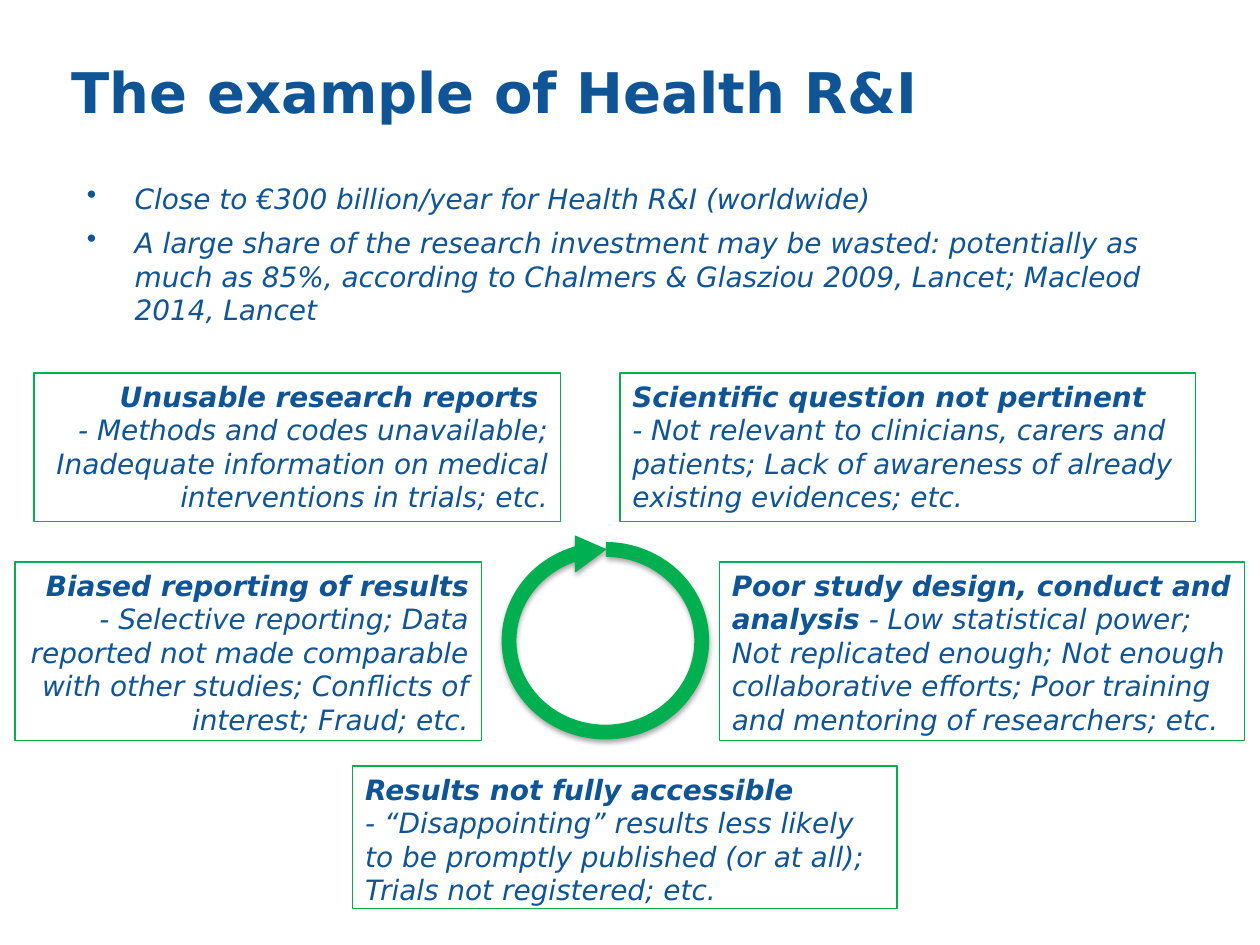
import lxml.etree
import pptx
import pptx.dml.color
import pptx.enum.shapes
import pptx.enum.text
import pptx.oxml.ns
import pptx.util

Inches = pptx.util.Inches
Pt = pptx.util.Pt
qn = pptx.oxml.ns.qn
Align = pptx.enum.text.PP_ALIGN
Anchor = pptx.enum.text.MSO_ANCHOR
Shape = pptx.enum.shapes.MSO_SHAPE

FONT = "DejaVu Sans"
BLUE = "0F5494"
GREEN = "00B050"


def color(value):
    return pptx.dml.color.RGBColor.from_string(value)


class HealthSlide:
    def __init__(self, slide):
        self.slide = slide

    def add_run(self, paragraph, text, size=16, bold=False, italic=True):
        run = paragraph.add_run()
        run.text = text
        run.font.name = FONT
        run.font.size = Pt(size)
        run.font.bold = bold
        run.font.italic = italic
        run.font.color.rgb = color(BLUE)

    def text_frame(self, place):
        frame = self.slide.shapes.add_textbox(*map(Inches, place)).text_frame
        frame.word_wrap = True
        return frame

    def outlined_shape(self, kind, place):
        shape = self.slide.shapes.add_shape(kind, *map(Inches, place))
        shape.shadow.inherit = False
        shape.line.color.rgb = color(GREEN)
        shape.line.width = Pt(0.75)
        return shape

    def title(self, text, place):
        frame = self.text_frame(place)
        frame.vertical_anchor = Anchor.MIDDLE
        self.add_run(frame.paragraphs[0], text, size=32, bold=True, italic=False)

    def bullets(self, items, place):
        frame = self.text_frame(place)
        for index, text in enumerate(items):
            paragraph = frame.add_paragraph() if index else frame.paragraphs[0]
            properties = paragraph._p.get_or_add_pPr()
            properties.set("marL", str(Inches(0.38)))
            properties.set("indent", str(-Inches(0.38)))
            bullet_color = lxml.etree.SubElement(properties, qn("a:buClr"))
            lxml.etree.SubElement(bullet_color, qn("a:srgbClr"), val=BLUE)
            lxml.etree.SubElement(properties, qn("a:buChar"), char="•")
            paragraph.space_after = Pt(6)
            self.add_run(paragraph, text)

    def cycle_arrow(self, place):
        arrow = self.outlined_shape(Shape.CIRCULAR_ARROW, place)
        arrow.rotation = 270
        for index, value in enumerate((0.062, 11.423, 204.577, 0.442, 0.081)):
            arrow.adjustments[index] = value
        arrow.fill.solid()
        arrow.fill.fore_color.rgb = color(GREEN)
        effects = arrow._element.spPr.find(qn("a:effectLst"))
        shadow = lxml.etree.SubElement(
            effects, qn("a:outerShdw"), blurRad=str(Pt(3.1)),
            dist=str(Pt(1.8)), dir="5400000", rotWithShape="0")
        shade = lxml.etree.SubElement(shadow, qn("a:srgbClr"), val="000000")
        lxml.etree.SubElement(shade, qn("a:alpha"), val="35000")

    def issue(self, place, heading, details, align=Align.LEFT, inline=False):
        box = self.outlined_shape(Shape.RECTANGLE, place)
        box.fill.background()
        frame = box.text_frame
        frame.word_wrap = True
        frame.vertical_anchor = Anchor.TOP
        paragraph = frame.paragraphs[0]
        self.add_run(paragraph, heading, bold=True)
        if not inline:
            paragraph.alignment = align
            paragraph = frame.add_paragraph()
        paragraph.alignment = align
        self.add_run(paragraph, details)


def main():
    deck = pptx.Presentation()
    deck.slide_width = Inches(10)
    deck.slide_height = Inches(7.5)
    page = HealthSlide(deck.slides.add_slide(deck.slide_layouts[6]))

    page.title("The example of Health R&I", (0.47, 0.21, 9.49, 1.02))
    page.bullets(
        ("Close to €300 billion/year for Health R&I (worldwide)",
         "A large share of the research investment may be wasted: potentially "
         "as much as 85%, according to Chalmers & Glasziou 2009, Lancet; "
         "Macleod 2014, Lancet"),
        (0.59, 1.39, 9.21, 1.18))
    page.cycle_arrow((3.94, 4.18, 1.73, 1.81))

    page.issue(
        (4.92, 2.96, 4.57, 1.18), "Scientific question not pertinent",
        "- Not relevant to clinicians, carers and patients; Lack of awareness "
        "of already existing evidences; etc.")
    page.issue(
        (5.71, 4.46, 4.17, 1.42), "Poor study design, conduct and analysis",
        " - Low statistical power; Not replicated enough; Not enough "
        "collaborative efforts; Poor training and mentoring of researchers; "
        "etc.", inline=True)
    page.issue(
        (2.8, 6.08, 4.32, 1.13), "Results not fully accessible",
        "- “Disappointing” results less likely to be promptly published "
        "(or at all); Trials not registered; etc.")
    page.issue(
        (0.12, 4.46, 3.7, 1.42), "Biased reporting of results ",
        "- Selective reporting; Data reported not made comparable with other "
        "studies; Conflicts of interest; Fraud; etc.", Align.RIGHT, inline=True)
    page.issue(
        (0.27, 2.96, 4.18, 1.18), "Unusable research reports ",
        "- Methods and codes unavailable; Inadequate information on medical "
        "interventions in trials; etc.", Align.RIGHT)

    deck.save("out.pptx")


if __name__ == "__main__":
    main()
